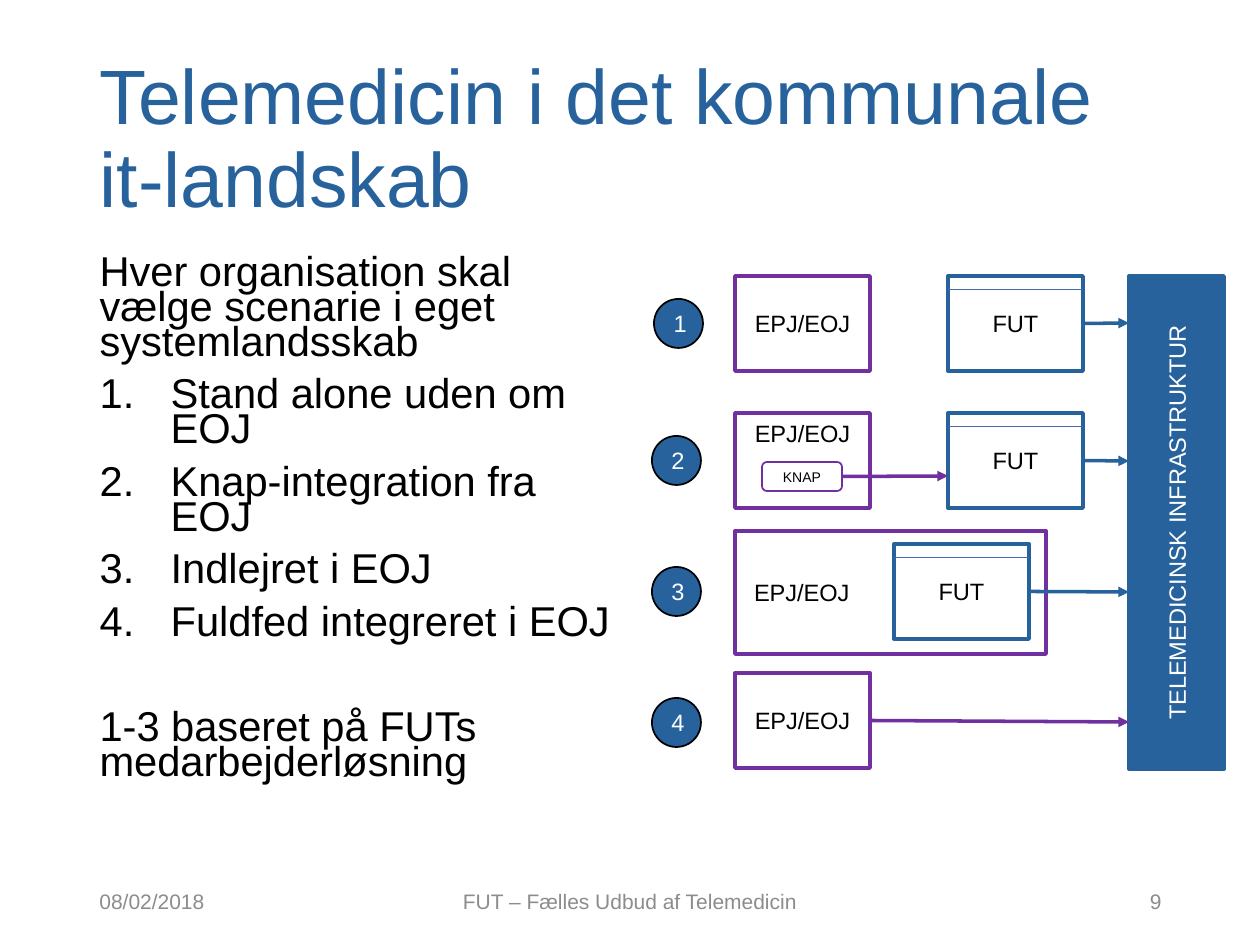
from dataclasses import dataclass

from lxml import etree
from pptx import Presentation
from pptx.dml.color import RGBColor
from pptx.enum.shapes import MSO_CONNECTOR, MSO_SHAPE
from pptx.enum.text import MSO_ANCHOR, MSO_AUTO_SIZE, PP_ALIGN
from pptx.oxml.ns import qn
from pptx.util import Emu, Pt

SCALE = 914400 / 126
RECT, ROUND, OVAL = MSO_SHAPE.RECTANGLE, MSO_SHAPE.ROUNDED_RECTANGLE, MSO_SHAPE.OVAL
STRAIGHT = MSO_CONNECTOR.STRAIGHT
LEFT, CENTER, RIGHT = PP_ALIGN.LEFT, PP_ALIGN.CENTER, PP_ALIGN.RIGHT
TOP, MIDDLE = MSO_ANCHOR.TOP, MSO_ANCHOR.MIDDLE
NO_AUTOFIT = MSO_AUTO_SIZE.NONE
RIGHT_SIDE = 3


@dataclass(frozen=True)
class Theme:
    font: str = "Arial"
    blue: str = "27629C"
    rule: str = "4A66AC"
    purple: str = "7030A0"
    black: str = "000000"
    white: str = "FFFFFF"
    grey: str = "8C8C8C"
    title: float = 44
    body: float = 23.8
    label: float = 13.5
    footer: float = 12
    button: float = 8


THEME = Theme()


def emu(*lengths):
    return [Emu(round(length * SCALE)) for length in lengths]


def write(frame, texts, size, color, anchor=MIDDLE, **paragraph_format):
    frame_format = {"word_wrap": True, "auto_size": NO_AUTOFIT, "vertical_anchor": anchor}
    for name, value in frame_format.items():
        setattr(frame, name, value)
    for index, text in enumerate(texts):
        paragraph = frame.add_paragraph() if index else frame.paragraphs[0]
        for name, value in paragraph_format.items():
            setattr(paragraph, name, value)
        run = paragraph.add_run()
        run.text = text
        for name, value in {"name": THEME.font, "size": Pt(size)}.items():
            setattr(run.font, name, value)
        run.font.color.rgb = RGBColor.from_string(color)


presentation = Presentation()
presentation.slide_width, presentation.slide_height = emu(1260, 945)
slide = presentation.slides.add_slide(presentation.slide_layouts[1])

title, scenarios = slide.placeholders
for placeholder, bounds in ((title, (87, 50, 1086, 183)), (scenarios, (87, 252, 536, 600))):
    for name, value in zip(("left", "top", "width", "height"), emu(*bounds)):
        setattr(placeholder, name, value)

write(title.text_frame, ["Telemedicin i det kommunale it-landskab"],
      THEME.title, THEME.blue, alignment=LEFT, line_spacing=0.9)
write(scenarios.text_frame, [
    "Hver organisation skal vælge scenarie i eget systemlandsskab",
    "Stand alone uden om EOJ",
    "Knap-integration fra EOJ",
    "Indlejret i EOJ",
    "Fuldfed integreret i EOJ",
    "1-3 baseret på FUTs medarbejderløsning",
], THEME.body, THEME.black, TOP, alignment=LEFT, line_spacing=0.7, space_before=Pt(10))

paragraphs = scenarios.text_frame.paragraphs
numbered = paragraphs[1:5]
paragraphs[-1].space_before = Pt(40)
for paragraph in paragraphs:
    properties = paragraph._p.get_or_add_pPr()
    is_numbered = paragraph in numbered
    indent = emu(71)[0] if is_numbered else 0
    properties.set("marL", str(indent))
    properties.set("indent", str(-indent))
    if is_numbered:
        etree.SubElement(properties, qn("a:buAutoNum"), type="arabicPeriod")
    else:
        etree.SubElement(properties, qn("a:buNone"))

for left, width, text, alignment in (
    (87, 284, "08/02/2018", LEFT),
    (417, 426, "FUT – Fælles Udbud af Telemedicin", CENTER),
    (890, 284, "9", RIGHT),
):
    footer = slide.shapes.add_textbox(*emu(left, 876, width, 50))
    write(footer.text_frame, [text], THEME.footer, THEME.grey, alignment=alignment)

system = (RECT, "EPJ/EOJ", THEME.label, THEME.purple, 2.25, None)
portal = (RECT, "FUT", THEME.label, THEME.blue, 2.25, None)
badges = [
    ((left, top, 49, 49), OVAL, str(number), THEME.label, THEME.black, 1, THEME.blue)
    for number, (left, top) in enumerate(((654, 299), (652, 436), (652, 567), (652, 698)), 1)
]
boxes = []
for bounds, geometry, text, size, outline, weight, fill in (
    ((948, 276, 135, 95), *portal),
    ((735, 276, 135, 95), *system),
    ((948, 413, 135, 95), *portal),
    ((735, 413, 135, 95), *system),
    ((762, 462, 80, 29), ROUND, "KNAP", THEME.button, THEME.purple, 1, None),
    ((894, 544, 135, 95), *portal),
    ((735, 531, 311, 123), *system),
    ((735, 673, 135, 95), *system),
    ((930, 475, 493, 95), RECT, "TELEMEDICINSK INFRASTRUKTUR", THEME.label, THEME.blue, 2.25, THEME.blue),
    *badges,
):
    box = slide.shapes.add_shape(geometry, *emu(*bounds))
    box.shadow.inherit = False
    box.line.color.rgb = RGBColor.from_string(outline)
    box.line.width = Pt(weight)
    if fill:
        box.fill.solid()
        box.fill.fore_color.rgb = RGBColor.from_string(fill)
    else:
        box.fill.background()
    write(box.text_frame, [text], size, THEME.white if fill else THEME.black, alignment=CENTER)
    boxes.append(box)

portal_1, _, portal_2, system_2, button, portal_3, system_3, system_4, infrastructure = boxes[:9]
infrastructure.rotation = 270
system_2.text_frame.vertical_anchor = TOP
system_3.text_frame.paragraphs[0].alignment = LEFT
system_3.text_frame.margin_left = emu(19)[0]

for source, start, end, color, weight in (
    (None, (948, 289), (1083, 289), THEME.rule, 0.5),
    (None, (948, 426), (1083, 426), THEME.rule, 0.5),
    (None, (894, 557), (1029, 557), THEME.rule, 0.5),
    (button, (842, 477), (948, 476), THEME.purple, 2),
    (system_4, (870, 721), (1129, 722), THEME.purple, 2),
    (portal_1, (1083, 323), (1129, 323), THEME.blue, 2),
    (portal_2, (1083, 461), (1129, 461), THEME.blue, 2),
    (portal_3, (1029, 592), (1129, 592), THEME.blue, 2),
):
    link = slide.shapes.add_connector(STRAIGHT, *emu(*start, *end))
    link.line.color.rgb = RGBColor.from_string(color)
    link.line.width = Pt(weight)
    if source:
        link.begin_connect(source, RIGHT_SIDE)
        etree.SubElement(link.line._get_or_add_ln(), qn("a:tailEnd"), type="triangle")
    etree.SubElement(link._element.spPr, qn("a:effectLst"))

presentation.save("out.pptx")
